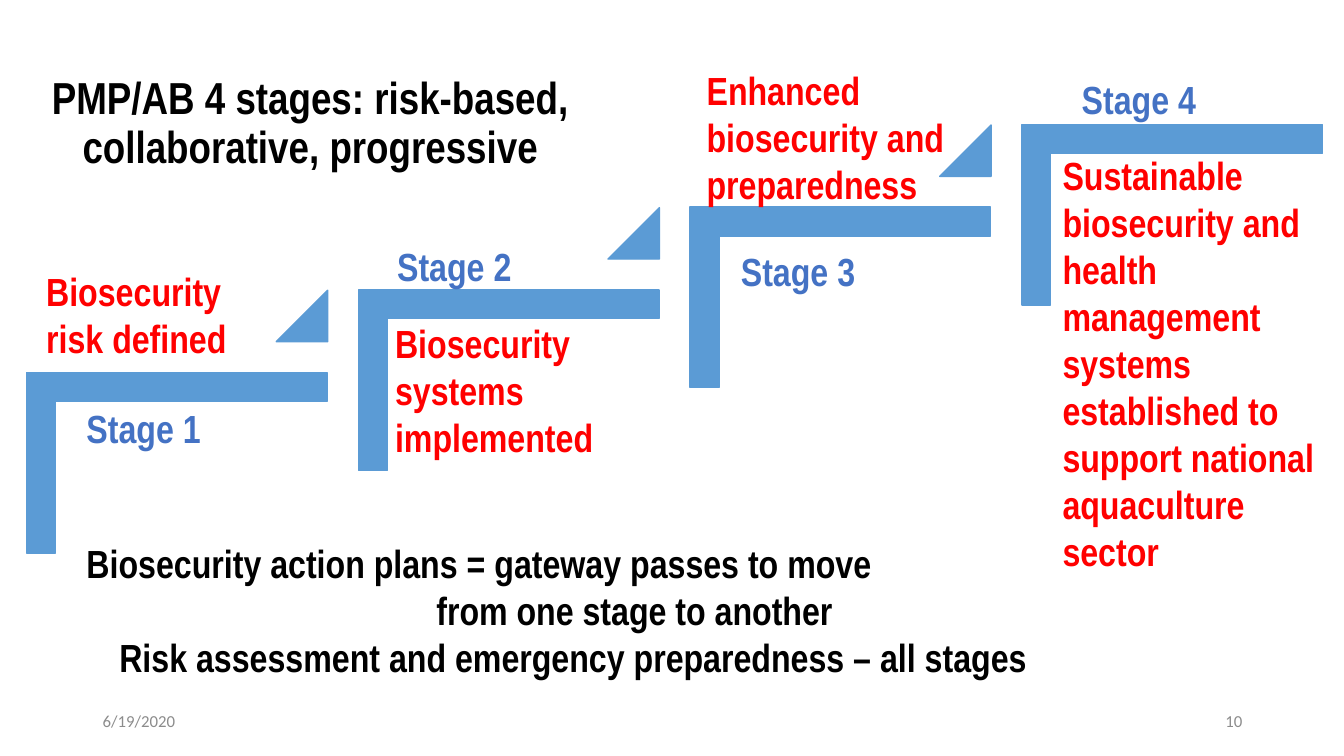
from pptx import Presentation
from pptx.dml.color import RGBColor
from pptx.enum.shapes import MSO_SHAPE
from pptx.enum.text import MSO_ANCHOR, MSO_AUTO_SIZE, PP_ALIGN
from pptx.util import Inches, Pt


def color(value):
    return RGBColor.from_string(value)


def write(box, lines, size, ink, font="Arial Narrow", bold=True,
          align=PP_ALIGN.LEFT, anchor=MSO_ANCHOR.TOP):
    frame = box.text_frame
    frame.word_wrap = True
    frame.auto_size = MSO_AUTO_SIZE.NONE
    frame.vertical_anchor = anchor
    frame.text = "\n".join(lines)
    for paragraph in frame.paragraphs:
        paragraph.alignment = align
        paragraph.font.name = font
        paragraph.font.size = Pt(size)
        paragraph.font.bold = bold
        paragraph.font.color.rgb = color(ink)
    return frame.paragraphs


presentation = Presentation()
presentation.slide_width = Inches(13.33)
presentation.slide_height = Inches(7.5)
slide = presentation.slides.add_slide(presentation.slide_layouts[5])

title = slide.shapes.title
title.left, title.top = Inches(0.11), Inches(0.51)
title.width, title.height = Inches(5.94), Inches(1.45)
heading = write(title, ["PMP/AB 4 stages: risk-based, collaborative, progressive"],
                32, "000000", align=PP_ALIGN.CENTER, anchor=MSO_ANCHOR.MIDDLE)
heading[0].line_spacing = 0.9

staircase = slide.shapes.add_group_shape()
for stage in range(4):
    across, rise = 3.29 * stage, 0.82 * stage
    step = staircase.shapes.add_shape(
        MSO_SHAPE.CORNER, Inches(0.86 + across), Inches(3.1 - rise),
        Inches(1.79), Inches(2.98))
    step.rotation = 90
    step.adjustments[0] = step.adjustments[1] = 0.16
    parts = [step]
    if stage < 3:
        pointer = staircase.shapes.add_shape(
            MSO_SHAPE.ISOSCELES_TRIANGLE, Inches(2.74 + across),
            Inches(2.88 - rise), Inches(0.51), Inches(0.51))
        pointer.adjustments[0] = 1
        parts.append(pointer)
    for part in parts:
        part.shadow.inherit = False
        part.fill.solid()
        part.fill.fore_color.rgb = color("5B9BD5")
        part.line.color.rgb = color("5B9BD5")
        part.line.width = Pt(1)

outcomes = [
    (0.36, 2.6, 2.33, 1.04, ["Biosecurity risk defined"]),
    (3.82, 3.12, 3.05, 1.82, ["Biosecurity systems implemented"]),
    (6.91, 0.61, 3.19, 1.82, ["Enhanced biosecurity and preparedness"]),
    (10.44, 1.45, 2.84, 4.64,
     ["Sustainable",
      "biosecurity and health management systems established to support "
      "national aquaculture sector"]),
]
for left, top, width, height, lines in outcomes:
    outcome = slide.shapes.add_textbox(
        Inches(left), Inches(top), Inches(width), Inches(height))
    write(outcome, lines, 28, "FF0000")

footers = [(9.42, "10", PP_ALIGN.RIGHT), (0.92, "6/19/2020", PP_ALIGN.LEFT)]
for left, text, align in footers:
    footer = slide.shapes.add_textbox(
        Inches(left), Inches(6.95), Inches(3), Inches(0.4))
    write(footer, [text], 12, "8C8C8C", "Calibri", False, align, MSO_ANCHOR.MIDDLE)

summary = slide.shapes.add_textbox(
    Inches(0.76), Inches(5.3), Inches(9.84), Inches(1.51))
plans, passage, assessment = write(
    summary,
    ["Biosecurity action plans = gateway passes to move",
     "from one stage to another",
     "Risk assessment and emergency preparedness – all stages"],
    28, "000000")
passage._p.get_or_add_pPr().set("marL", str(Inches(3.47)))
assessment.alignment = PP_ALIGN.CENTER

stage_labels = [(0.76, 3.96, 1.93), (3.84, 2.35, 1.75),
                (7.25, 2.4, 1.53), (10.63, 0.7, 1.79)]
for number, (left, top, width) in enumerate(stage_labels, 1):
    label = slide.shapes.add_textbox(
        Inches(left), Inches(top), Inches(width), Inches(0.57))
    write(label, [f"Stage {number}"], 28, "4472C4")

presentation.save("out.pptx")
